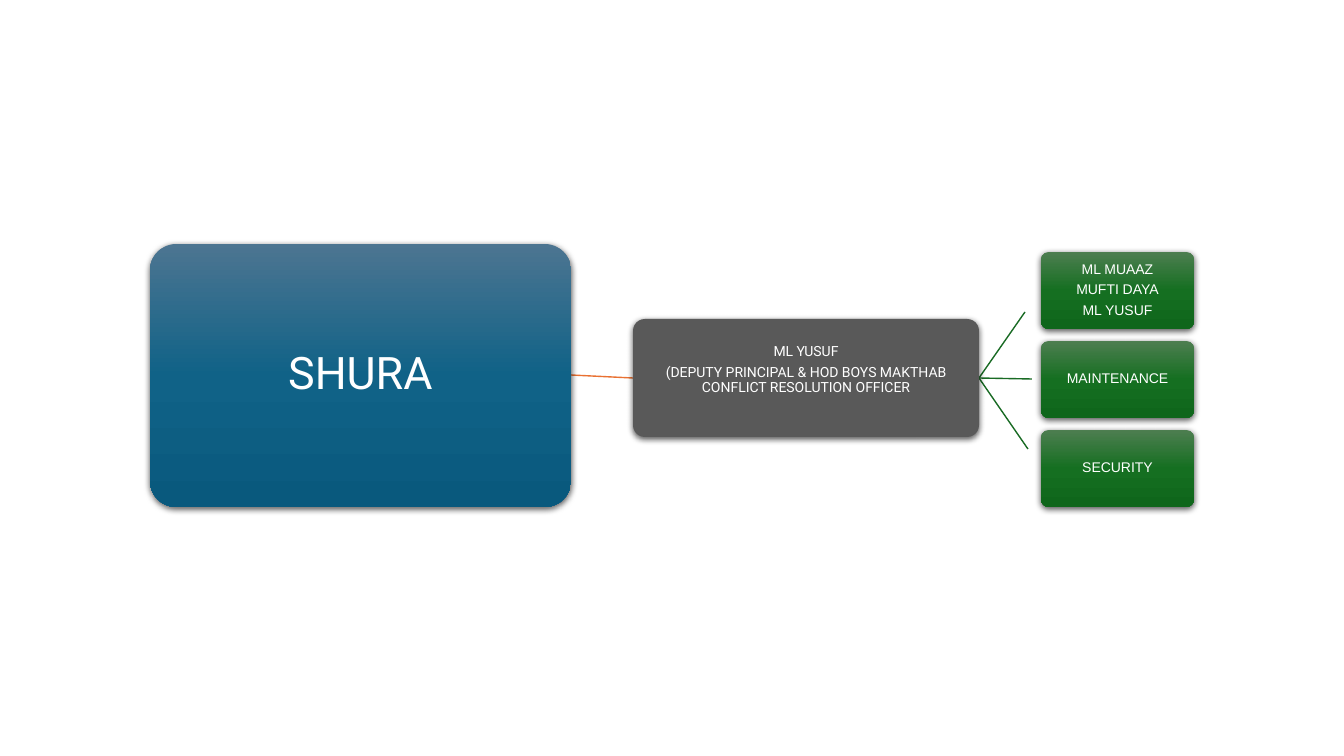
from lxml.etree import SubElement
from pptx import Presentation
from pptx.dml.color import RGBColor
from pptx.enum.shapes import MSO_CONNECTOR, MSO_SHAPE
from pptx.enum.text import MSO_ANCHOR, PP_ALIGN
from pptx.oxml import parse_xml
from pptx.oxml.ns import nsdecls, qn
from pptx.util import Pt

# Content
ROOT = ["SHURA"]
LEAD = ["ML YUSUF",
        "(DEPUTY PRINCIPAL & HOD BOYS MAKTHAB CONFLICT RESOLUTION OFFICER"]
TEAMS = [["ML MUAAZ", "MUFTI DAYA", "ML YUSUF"], ["MAINTENANCE"], ["SECURITY"]]

# Look
COLORS = {
    "root": ["4C7591", "106287", "09597D"],
    "lead": ["595959"],
    "team": ["4D7E50", "156F21", "0F661B"],
    "text": "FFFFFF",
    "link": "E97132",
    "fan": "196B24",
}
FONTS = {
    "root": {"name": "Roboto", "size": Pt(32)},
    "lead": {"name": "Roboto", "size": Pt(10)},
    "team": {"name": "Arial", "size": Pt(10)},
}

# Geometry in px
PX = 914400 / 100.8
ROOT_BOX = (150, 244, 421, 263)
LEAD_BOX = (633, 319, 346, 118)
TEAM_BOX = (1041, 252, 153, 77)
PITCH = 89
FAN_ENDS = [(1025, 312), (1032, 379), (1028, 449)]


def px(*vals):
    return [round(v * PX) for v in vals]


def paint(shape, hues):
    if len(hues) == 1:
        shape.fill.solid()
        shape.fill.fore_color.rgb = RGBColor.from_string(hues[0])
        return
    shape.fill.gradient()
    grad = shape._element.spPr.find(qn("a:gradFill"))
    stops = grad.find(qn("a:gsLst"))
    for stop in list(stops):
        stops.remove(stop)
    for i, hue in enumerate(hues):
        stop = SubElement(stops, qn("a:gs"), pos=str(i * 50000))
        SubElement(stop, qn("a:srgbClr"), val=hue)
    grad.find(qn("a:lin")).set("ang", "5400000")


def shade(shape):
    shape.shadow.inherit = False
    effects = shape._element.spPr.find(qn("a:effectLst"))
    effects.append(parse_xml(
        f'<a:outerShdw {nsdecls("a")} blurRad="57150" dist="19050" '
        'dir="5400000" algn="ctr" rotWithShape="0"><a:srgbClr val="000000">'
        '<a:alpha val="63000"/></a:srgbClr></a:outerShdw>'))


def add_box(slide, box, kind, lines, pad=(2, 2)):
    shape = slide.shapes.add_shape(MSO_SHAPE.ROUNDED_RECTANGLE, *px(*box))
    shape.adjustments[0] = 0.1
    paint(shape, COLORS[kind])
    shape.line.fill.background()
    shade(shape)
    frame = shape.text_frame
    side, foot = px(*pad)
    form = {"word_wrap": True, "vertical_anchor": MSO_ANCHOR.MIDDLE,
            "margin_left": side, "margin_right": side,
            "margin_top": px(2)[0], "margin_bottom": foot}
    for key, val in form.items():
        setattr(frame, key, val)
    for i, line in enumerate(lines):
        para = frame.paragraphs[0] if i == 0 else frame.add_paragraph()
        para.alignment = PP_ALIGN.CENTER
        para.line_spacing = 0.9
        para.space_before = Pt(4 if i else 0)
        run = para.add_run()
        run.text = line
        for key, val in FONTS[kind].items():
            setattr(run.font, key, val)
        run.font.color.rgb = RGBColor.from_string(COLORS["text"])


def add_link(slide, start, end, hue):
    link = slide.shapes.add_connector(
        MSO_CONNECTOR.STRAIGHT, *px(*start, *end))
    link.line.color.rgb = RGBColor.from_string(COLORS[hue])
    link.line.width = Pt(1)
    SubElement(link._element.spPr, qn("a:effectLst"))


def east(box):
    return box[0] + box[2], box[1] + box[3] // 2


def main():
    deck = Presentation()
    deck.slide_width, deck.slide_height = px(1344, 756)
    slide = deck.slides.add_slide(deck.slide_layouts[6])

    # Links
    hub = east(LEAD_BOX)
    add_link(slide, east(ROOT_BOX), (LEAD_BOX[0], hub[1]), "link")
    for end in FAN_ENDS:
        add_link(slide, hub, end, "fan")

    # Boxes
    add_box(slide, ROOT_BOX, "root", ROOT)
    add_box(slide, LEAD_BOX, "lead", LEAD, pad=(16, 18))
    left, top, wide, high = TEAM_BOX
    for i, lines in enumerate(TEAMS):
        add_box(slide, (left, top + i * PITCH, wide, high), "team", lines)

    deck.save("out.pptx")


if __name__ == "__main__":
    main()
